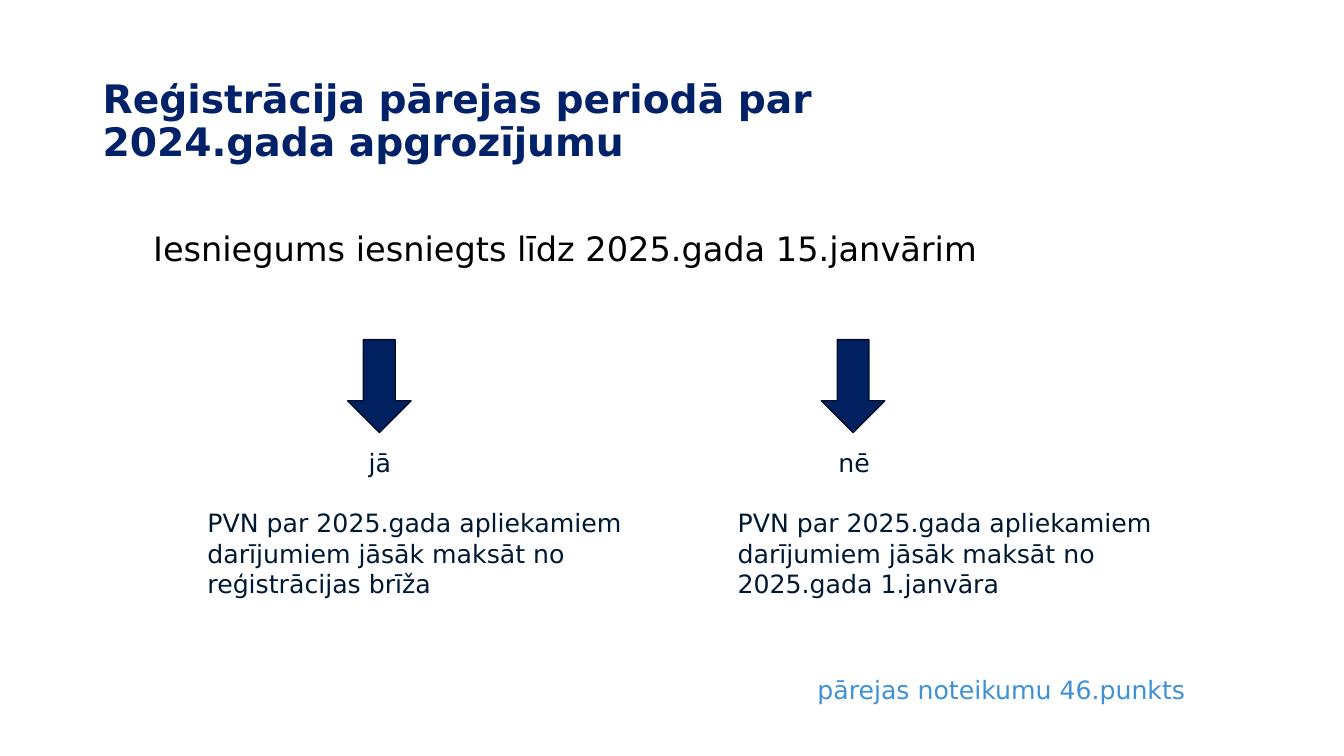
import pptx
import pptx.util
import pptx.dml.color
import pptx.enum.shapes
import pptx.enum.text

Cm = pptx.util.Cm
Pt = pptx.util.Pt

# Content
TITLE = "Reģistrācija pārejas periodā par 2024.gada apgrozījumu"
LEAD = "Iesniegums iesniegts līdz 2025.gada 15.janvārim"
NOTE = "pārejas noteikumu 46.punkts"
STEM = "PVN par 2025.gada apliekamiem darījumiem jāsāk maksāt no "
# Each path: answer, result, then left edges of arrow, answer and result
PATHS = [
    ("jā", STEM + "reģistrācijas brīža", 8.76, 9.04, 4.98),
    ("nē", STEM + "2025.gada 1.janvāra", 20.7, 20.88, 18.34),
]

HUES = {
    "title": "012269",
    "lead": "000000",
    "body": "001933",
    "note": "3F91D5",
    "arrow": "002060",
    "edge": "000E2A",
}
FORMS = {
    "title": {"size": Pt(28), "bold": True},
    "lead": {"size": Pt(24), "bold": False},
    "body": {"size": Pt(18), "bold": False},
    "note": {"size": Pt(18), "bold": False},
}


def hue(name):
    return pptx.dml.color.RGBColor.from_string(HUES[name])


def write(text, role, left, top, width, height):
    box = slide.shapes.add_textbox(Cm(left), Cm(top), Cm(width), Cm(height))
    frame = box.text_frame
    frame.word_wrap = True
    para = frame.paragraphs[0]
    run = para.add_run()
    run.text = text
    run.font.name = "DejaVu Sans"
    run.font.color.rgb = hue(role)
    for key, value in FORMS[role].items():
        setattr(run.font, key, value)
    if role == "title":
        frame.vertical_anchor = pptx.enum.text.MSO_ANCHOR.MIDDLE
        para.line_spacing = 0.9


def point(left, top, width, height):
    arrow = slide.shapes.add_shape(
        pptx.enum.shapes.MSO_SHAPE.DOWN_ARROW,
        Cm(left), Cm(top), Cm(width), Cm(height))
    arrow.shadow.inherit = False
    arrow.fill.solid()
    arrow.fill.fore_color.rgb = hue("arrow")
    arrow.line.color.rgb = hue("edge")
    arrow.line.width = Pt(1)


deck = pptx.Presentation()
deck.slide_width, deck.slide_height = Cm(33.87), Cm(19.05)
slide = deck.slides.add_slide(deck.slide_layouts[6])

# Heading and lead
write(TITLE, "title", 2.34, 1.83, 24.46, 2.51)
write(LEAD, "lead", 3.61, 5.62, 25.6, 1.25)

# Two paths: arrow, answer, result
for answer, result, tip, mark, edge in PATHS:
    point(tip, 8.56, 1.6, 2.34)
    write(answer, "body", mark, 11.15, 1.8, 1.02)
    write(result, "body", edge, 12.67, 12.4, 2.57)

# Source note
write(NOTE, "note", 20.35, 16.87, 11.2, 1.02)

deck.save("out.pptx")
